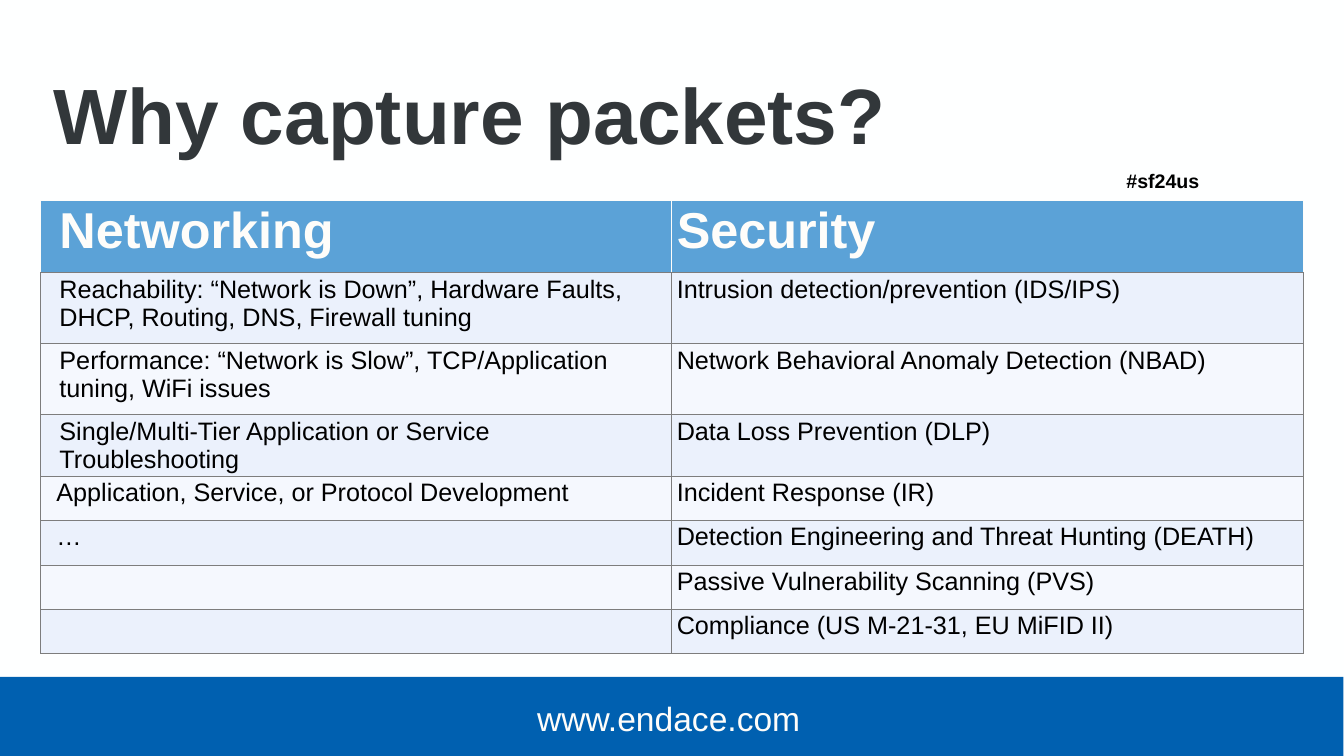
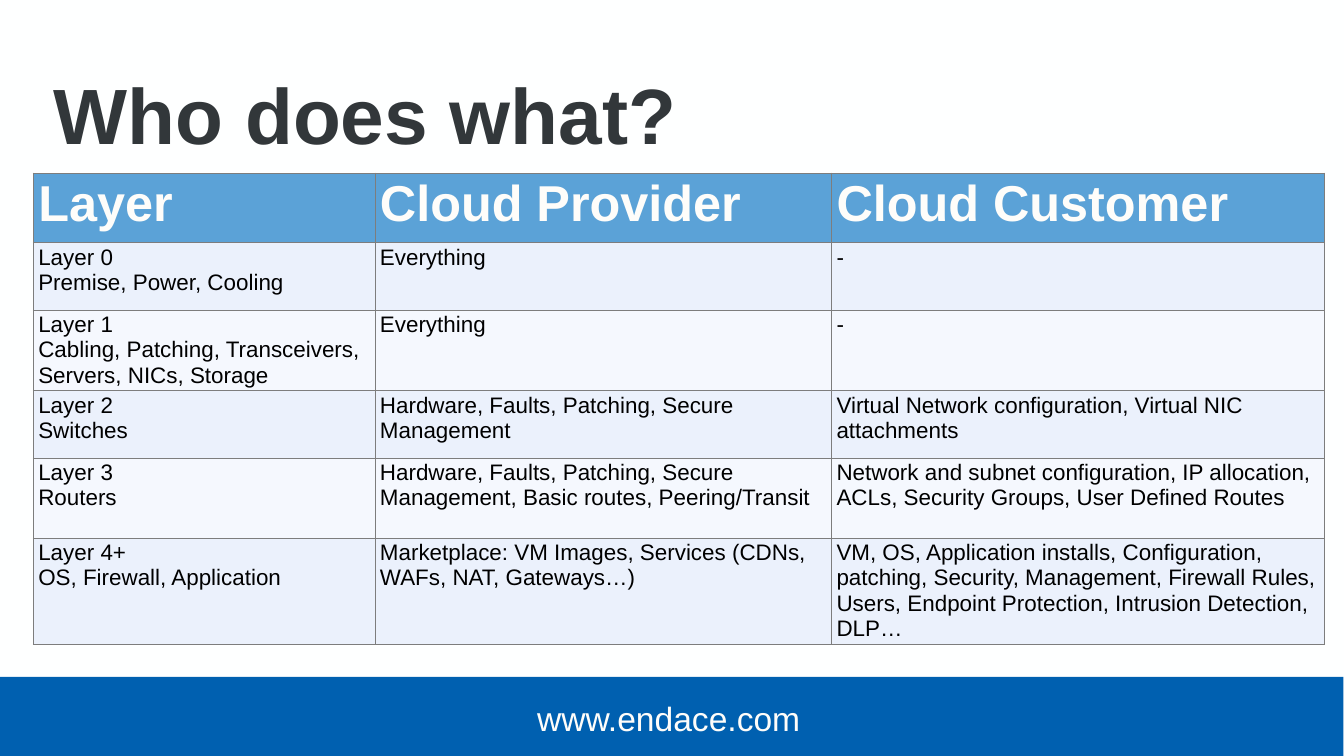
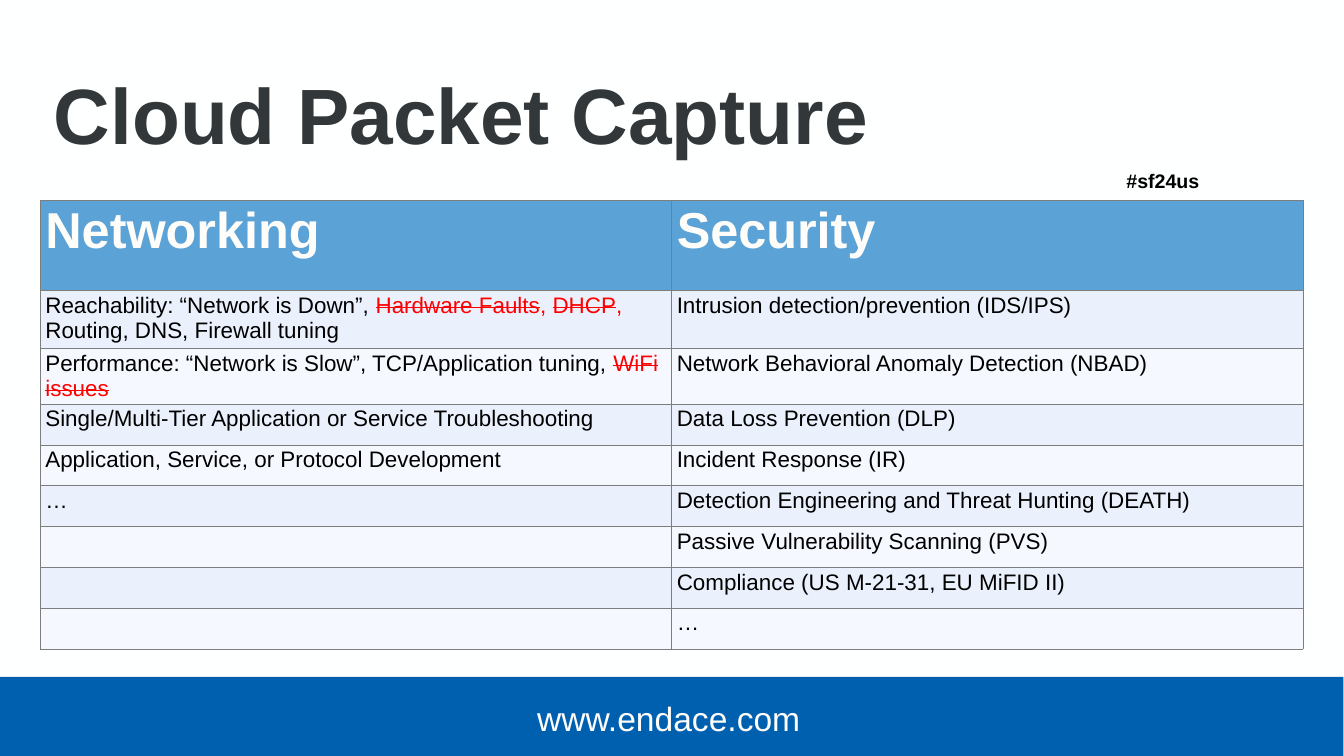
from dataclasses import dataclass
from typing import NamedTuple

from lxml.etree import SubElement
from pptx import Presentation
from pptx.dml.color import RGBColor
from pptx.enum.shapes import MSO_SHAPE
from pptx.enum.text import MSO_ANCHOR, MSO_AUTO_SIZE, PP_ALIGN
from pptx.oxml.ns import qn
from pptx.util import Inches, Pt

FONT = "Arial"
HUES = {
    "page": "FEFFFF",
    "title": "32373A",
    "band": "0060B0",
    "pale": "FEFDFA",
    "head": "5BA2D7",
    "odd": "EBF1FC",
    "even": "F5F8FE",
    "rule": "7D7D7D",
    "ink": "000000",
    "gone": "FF0000",
}


class Part(NamedTuple):
    """A piece of a cell's text with its own look."""
    text: str
    hue: str = "ink"
    struck: bool = False


class Box(NamedTuple):
    left: float
    top: float
    width: float
    height: float


@dataclass
class Page:
    title: str
    left: float
    top: float
    cols: list[float]
    heights: list[float]
    rows: list[tuple]
    size: int
    indents: tuple[float, ...] = ()
    head_rule: str = "rule"
    tagged: bool = True


TITLE = Box(0.8, 0.5, 18.95, 3.48)
TAG = Box(21.87, 3.23, 2.41, 0.7)
BAND = Box(-0.12, 13.43, 26.78, 1.62)

HEADS = ("Networking", "Security")
REACH = "Reachability: “Network is Down”, "
SPEED = "Performance: “Network is Slow”, TCP/Application tuning, "
TASKS = [
    "Single/Multi-Tier Application or Service Troubleshooting",
    "Application, Service, or Protocol Development",
    "…", "", "",
]
GUARDS = [
    "Intrusion detection/prevention (IDS/IPS)",
    "Network Behavioral Anomaly Detection (NBAD)",
    "Data Loss Prevention (DLP)",
    "Incident Response (IR)",
    "Detection Engineering and Threat Hunting (DEATH)",
    "Passive Vulnerability Scanning (PVS)",
    "Compliance (US M-21-31, EU MiFID II)",
]
WHY_TASKS = [
    REACH + "Hardware Faults, DHCP, Routing, DNS, Firewall tuning",
    SPEED + "WiFi issues",
    *TASKS,
]
CLOUD_TASKS = [
    [
        Part(REACH),
        Part("Hardware Faults", "gone", True),
        Part(", ", "gone"),
        Part("DHCP", "gone", True),
        Part(", ", "gone"),
        Part("Routing, DNS, Firewall tuning"),
    ],
    [Part(SPEED), Part("WiFi issues", "gone", True)],
    *TASKS, "",
]
LAYERS = [
    ("Layer", "Cloud Provider", "Cloud Customer"),
    ("Layer 0\nPremise, Power, Cooling", "Everything", "-"),
    ("Layer 1\nCabling, Patching, Transceivers, Servers, NICs, Storage",
     "Everything", "-"),
    ("Layer 2\nSwitches",
     "Hardware, Faults, Patching, Secure Management",
     "Virtual Network configuration, Virtual NIC attachments"),
    ("Layer 3\nRouters",
     "Hardware, Faults, Patching, Secure Management, Basic routes, "
     "Peering/Transit",
     "Network and subnet configuration, IP allocation, ACLs, "
     "Security Groups, User Defined Routes"),
    ("Layer 4+\nOS, Firewall, Application",
     "Marketplace: VM Images, Services (CDNs, WAFs, NAT, Gateways…)",
     "VM, OS, Application installs, Configuration, patching, Security, "
     "Management, Firewall Rules, Users, Endpoint Protection, "
     "Intrusion Detection, DLP…"),
]

PAGES = [
    Page("Why capture packets?", 0.8, 3.98, [12.53] * 2,
         [1.43] + [1.41] * 2 + [0.88] * 5,
         [HEADS, *zip(WHY_TASKS, GUARDS)], 36,
         indents=(0.28,) * 4 + (0.22,) * 2, head_rule="pale"),
    Page("Who does what?", 0.66, 3.43, [6.78, 9.06, 9.78],
         [1.38, 1.34, 1.59, 1.34, 1.59, 2.1],
         LAYERS, 32, tagged=False),
    Page("Cloud Packet Capture", 0.8, 3.98, [12.53] * 2,
         [1.79, 1.15] + [0.81] * 7,
         [HEADS, *zip(CLOUD_TASKS, GUARDS + ["…"])], 32),
]


def tint(name: str) -> RGBColor:
    return RGBColor.from_string(HUES[name])


def style(font, size: int, hue: str, bold: bool = False) -> None:
    font.name = FONT
    font.size = Pt(size)
    font.bold = bold
    font.color.rgb = tint(hue)


def place(box: Box) -> list[int]:
    return [Inches(side) for side in box]


def label(shape, text: str, inset: float, align, size: int, hue: str,
          bold: bool = False) -> None:
    frame = shape.text_frame
    frame.text = text
    frame.word_wrap = True
    frame.auto_size = MSO_AUTO_SIZE.NONE
    frame.vertical_anchor = MSO_ANCHOR.MIDDLE
    frame.margin_left = frame.margin_right = Inches(inset)
    frame.margin_top = frame.margin_bottom = Inches(inset)
    line = frame.paragraphs[0]
    line.alignment = align
    style(line.runs[0].font, size, hue, bold)


def add_frame(slide, page: Page) -> None:
    """Set the background, title, hashtag and footer band."""
    back = slide.background.fill
    back.solid()
    back.fore_color.rgb = tint("page")

    if page.tagged:
        tag = slide.shapes.add_textbox(*place(TAG))
        label(tag, "#sf24us", 0.27, PP_ALIGN.CENTER, 28, "ink", True)

    band = slide.shapes.add_shape(MSO_SHAPE.RECTANGLE, *place(BAND))
    band.shadow.inherit = False
    band.fill.solid()
    band.fill.fore_color.rgb = tint("band")
    band.line.fill.background()
    label(band, "www.endace.com", 0.13, PP_ALIGN.CENTER, 48, "pale")

    title = slide.shapes.title
    title.left, title.top, title.width, title.height = place(TITLE)
    label(title, page.title, 0.27, PP_ALIGN.LEFT, 112, "title", True)


def edge(cell, hues: dict[str, str]) -> None:
    """Draw the cell's borders, given a hue for each side."""
    props = cell._tc.get_or_add_tcPr()
    for spot, (side, hue) in enumerate(hues.items()):
        line = SubElement(props, qn(f"a:ln{side}"), w=str(Pt(1)))
        fill = SubElement(line, qn("a:solidFill"))
        SubElement(fill, qn("a:srgbClr"), val=HUES[hue])
        props.insert(spot, line)


def write(cell, text: str | list[Part], size: int, head: bool,
          indent: float) -> None:
    frame = cell.text_frame
    if isinstance(text, str):
        frame.text = text
        for line in frame.paragraphs:
            for run in line.runs:
                style(run.font, size, "pale" if head else "ink", head)
    else:
        for part in text:
            run = frame.paragraphs[0].add_run()
            run.text = part.text
            style(run.font, size, part.hue)
            if part.struck:
                run._r.get_or_add_rPr().set("strike", "sngStrike")
    if indent:
        for line in frame.paragraphs:
            line._p.get_or_add_pPr().set("marL", str(Inches(indent)))


def add_grid(slide, page: Page) -> None:
    box = Box(page.left, page.top, sum(page.cols), sum(page.heights))
    grid = slide.shapes.add_table(
        len(page.rows), len(page.cols), *place(box)).table
    for col, width in zip(grid.columns, page.cols):
        col.width = Inches(width)
    for row, height in zip(grid.rows, page.heights):
        row.height = Inches(height)

    for r, texts in enumerate(page.rows):
        head = r == 0
        shade = "head" if head else "odd" if r % 2 else "even"
        hues = dict.fromkeys("LRTB", "rule")
        if head:
            hues.update(dict.fromkeys("LRT", page.head_rule))
        for c, text in enumerate(texts):
            cell = grid.cell(r, c)
            cell.fill.solid()
            cell.fill.fore_color.rgb = tint(shade)
            edge(cell, hues)
            dent = page.indents[r] if c == 0 and r < len(page.indents) else 0
            write(cell, text, 72 if head else page.size, head, dent)


def main() -> None:
    deck = Presentation()
    deck.slide_width = Inches(26.67)
    deck.slide_height = Inches(15)
    for page in PAGES:
        slide = deck.slides.add_slide(deck.slide_layouts[5])
        add_frame(slide, page)
        add_grid(slide, page)
    deck.save("out.pptx")


if __name__ == "__main__":
    main()
